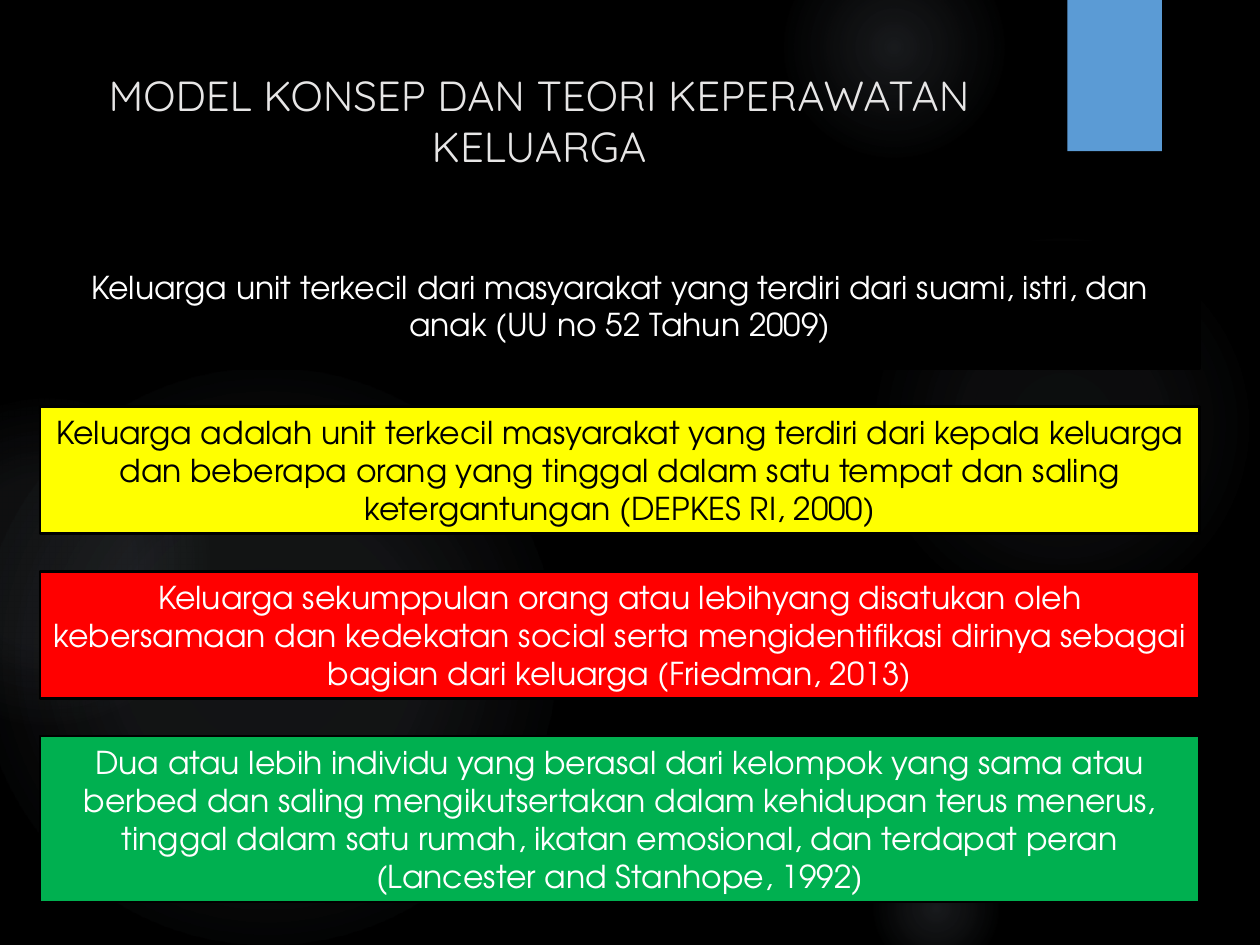
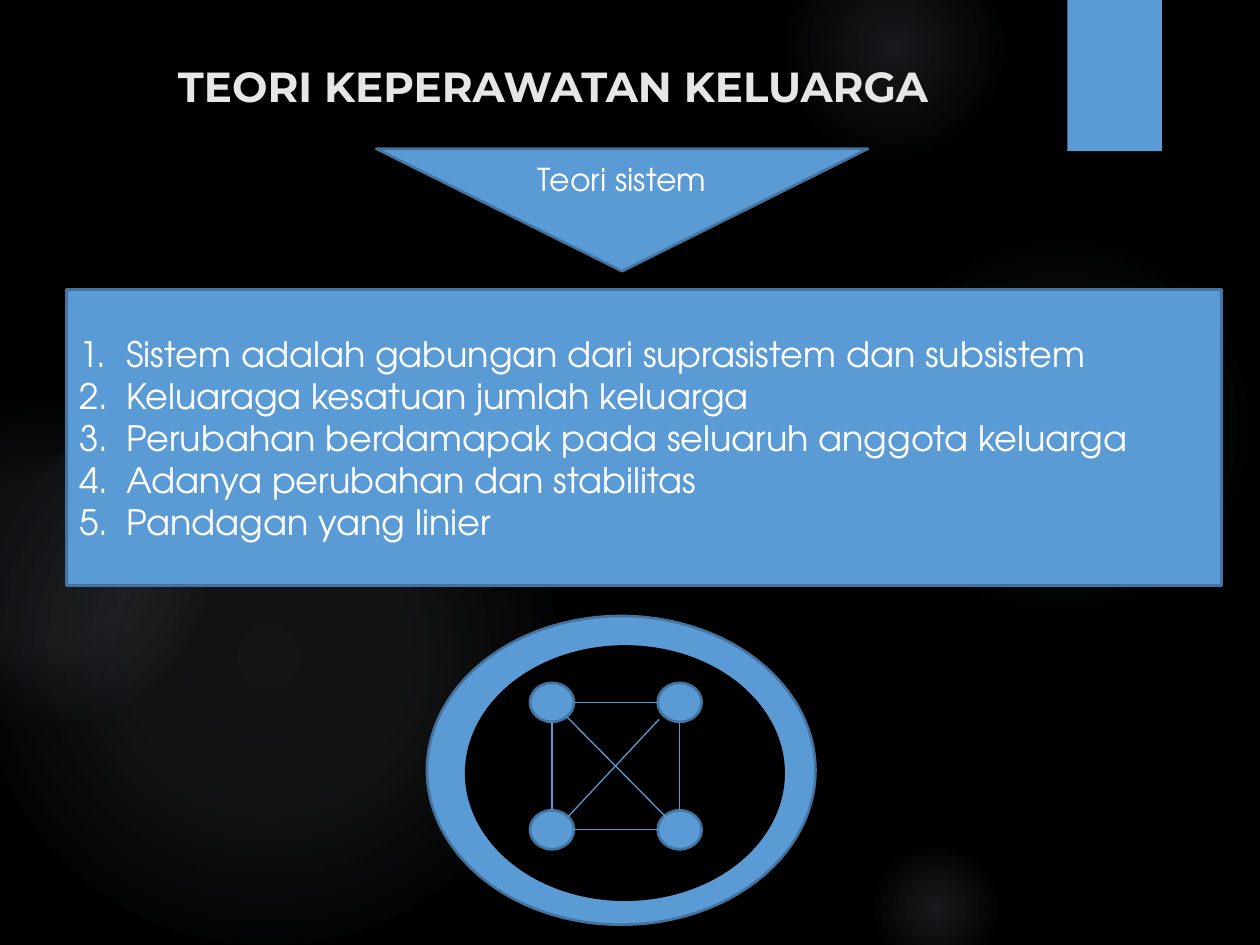
from lxml import etree
from pptx import Presentation
from pptx import util as u
from pptx.dml import color
from pptx.enum import shapes, text
from pptx.oxml import ns

COLOURS = {
    "black": "000000", "white": "FFFFFF", "title": "E7E6E6", "blue": "5B9BD5",
    "edge": "43739E", "glow": "ADB9CA", "yellow": "FFFF00", "red": "FF0000",
    "green": "00B050",
}
BODY_FONT = "TeX Gyre Adventor"
SHAPE = shapes.MSO_SHAPE
TITLE_ONLY, TITLE_AND_CONTENT = 5, 1

GLOWS = [
    (496, 132, 222, [(0, 7), (36, 6), (69, 0)]),
    (448, -36, 126, [(0, 14), (36, 7), (73, 0)]),
    (496, 480, 78, [(0, 14), (36, 7), (66, 0)]),
    (-12, 210, 330, [(0, 11), (36, 10), (75, 0)]),
    (-66, 228, 186, [(0, 8), (36, 8), (72, 0)]),
]
DEFINITIONS = [
    ("Keluarga unit terkecil dari masyarakat yang terdiri dari suami, istri, dan anak "
     "(UU no 52 Tahun 2009)", "black", "white", 72.7),
    ("Keluarga adalah unit terkecil masyarakat yang terdiri dari kepala keluarga dan beberapa "
     "orang yang tinggal dalam satu tempat dan saling ketergantungan (DEPKES RI, 2000)",
     "yellow", "black", 72.7),
    ("Keluarga sekumppulan orang atau lebihyang disatukan oleh kebersamaan dan kedekatan social "
     "serta mengidentifikasi dirinya sebagai bagian dari keluarga (Friedman, 2013)",
     "red", "white", 72.7),
    ("Dua atau lebih individu yang berasal dari kelompok yang sama atau berbed dan saling "
     "mengikutsertakan dalam kehidupan terus menerus, tinggal dalam satu rumah, ikatan "
     "emosional, dan terdapat peran (Lancester and Stanhope, 1992)", "green", "white", 95),
]
SYSTEM_POINTS = [
    "Sistem adalah gabungan dari suprasistem dan subsistem",
    "Keluaraga kesatuan jumlah keluarga",
    "Perubahan berdamapak pada seluaruh anggota keluarga",
    "Adanya perubahan dan stabilitas",
    "Pandagan yang linier",
]


def rgb(name):
    return color.RGBColor.from_string(COLOURS[name])


def add_xml(parent, tag, **attributes):
    return etree.SubElement(parent, ns.qn(tag), {key: str(value) for key, value in attributes.items()})


def add_colour(parent, name, alpha):
    colour = add_xml(parent, "a:srgbClr", val=COLOURS[name])
    add_xml(colour, "a:alpha", val=alpha * 1000)


class Deck:
    def __init__(self):
        self.presentation = Presentation()
        self.presentation.slide_width, self.presentation.slide_height = u.Pt(720), u.Pt(540)
        self.slide = None

    def new_slide(self, layout):
        self.slide = self.presentation.slides.add_slide(self.presentation.slide_layouts[layout])

    def place(self, shape, box):
        for name, value in zip(("left", "top", "width", "height"), box):
            setattr(shape, name, u.Pt(value))

    def paint(self, shape, fill, edge):
        shape.fill.solid()
        shape.fill.fore_color.rgb = rgb(fill)
        if edge:
            shape.line.color.rgb = rgb(edge)
            shape.line.width = u.Pt(1.5)
        else:
            shape.line.fill.background()

    def set_text(self, shape, lines, size, colour="white", name=BODY_FONT, bold=False,
                 alignment=text.PP_ALIGN.CENTER):
        frame = shape.text_frame
        frame_format = {"word_wrap": True, "auto_size": text.MSO_AUTO_SIZE.NONE,
                        "vertical_anchor": text.MSO_ANCHOR.MIDDLE}
        for key, value in frame_format.items():
            setattr(frame, key, value)
        frame.text = "\n".join(lines)
        for paragraph in frame.paragraphs:
            paragraph.alignment = alignment
            paragraph.space_before = u.Pt(0)
            for run in paragraph.runs:
                for key, value in {"size": u.Pt(size), "name": name, "bold": bold}.items():
                    setattr(run.font, key, value)
                run.font.color.rgb = rgb(colour)

    def title(self, box, wording, font, bold=False):
        title = self.slide.shapes.title
        self.place(title, box)
        self.set_text(title, [wording], 24, "title", font, bold)

    def shape(self, kind, box, fill="blue", edge="edge"):
        shape = self.slide.shapes.add_shape(kind, *map(u.Pt, box))
        shape.shadow.inherit = False
        self.paint(shape, fill, edge)
        return shape

    def numbered_list(self, box, items):
        body = self.slide.placeholders[1]
        self.place(body, box)
        self.paint(body, "blue", "edge")
        self.set_text(body, items, 20, alignment=text.PP_ALIGN.LEFT)
        for paragraph in body.text_frame.paragraphs:
            properties = paragraph._p.get_or_add_pPr()
            properties.set("marL", str(u.Pt(27)))
            properties.set("indent", str(u.Pt(-27)))
            add_xml(properties, "a:buFont", typeface="+mj-lt")
            add_xml(properties, "a:buAutoNum", type="arabicPeriod")

    def line(self, start, end):
        line = self.slide.shapes.add_connector(
            shapes.MSO_CONNECTOR.STRAIGHT, *map(u.Pt, (*start, *end)))
        line.line.color.rgb = rgb("blue")
        line.line.width = u.Pt(0.75)
        add_xml(line.element.spPr, "a:effectLst")

    def glow(self, left, top, size, stops):
        shape = self.shape(SHAPE.OVAL, (left, top, size, size), "glow", None)
        solid = shape.element.spPr.find(ns.qn("a:solidFill"))
        gradient = etree.Element(ns.qn("a:gradFill"), rotWithShape="1")
        stop_list = add_xml(gradient, "a:gsLst")
        for position, alpha in stops:
            add_colour(add_xml(stop_list, "a:gs", pos=position * 1000), "glow", alpha)
        circle = add_xml(gradient, "a:path", path="circle")
        add_xml(circle, "a:fillToRect", l=50000, t=50000, r=50000, b=50000)
        solid.getparent().replace(solid, gradient)
        return shape

    def ribbon(self):
        shape = self.shape(SHAPE.RECTANGLE, (610, 0, 54, 86.4), "blue", None)
        effects = shape.element.spPr.find(ns.qn("a:effectLst"))
        shadow = add_xml(effects, "a:outerShdw", blurRad=u.Pt(3), dist=u.Pt(2),
                         dir=5400000, rotWithShape=0)
        add_colour(shadow, "black", 45)
        return shape

    def decorate_master(self):
        master = self.presentation.slide_master
        master.background.fill.solid()
        master.background.fill.fore_color.rgb = rgb("black")
        decorations = [self.glow(*glow) for glow in GLOWS] + [self.ribbon()]
        for number, shape in enumerate(decorations):
            shape.element.nvSpPr.cNvPr.set("id", str(101 + number))
            master.shapes.element.insert(2 + number, shape.element)


def build_definitions(deck):
    deck.title((23, 36, 570, 65.5), "MODEL KONSEP DAN TEORI KEPERAWATAN KELUARGA", "Quicksand")
    for row, (wording, fill, colour, height) in enumerate(DEFINITIONS):
        card = deck.shape(SHAPE.RECTANGLE, (23, 138.2 + 94.1 * row, 662.4, height), fill, "black")
        deck.set_text(card, [wording], 18, colour)


def build_network(deck):
    deck.shape(SHAPE.OVAL, (244, 352, 222, 176.4))
    deck.shape(SHAPE.OVAL, (266.4, 369.4, 181.4, 144.7), "black", "black")
    lefts, tops, width, height = (302.8, 375.8), (390.2, 463), 25.2, 22.3
    for top in tops:
        for left in lefts:
            deck.shape(SHAPE.OVAL, (left, top, width, height))
    for top in tops:
        middle = top + height / 2
        deck.line((lefts[0] + width, middle), (lefts[1], middle))
    for left in lefts:
        middle = left + width / 2
        deck.line((middle, tops[0] + height), (middle, tops[1]))
    deck.line((324, 409.7), (388.1, 474.5))
    deck.line((324.7, 466.6), (376.6, 411.1))


def build_system_theory(deck):
    deck.title((38, 28.8, 556, 40.3), "TEORI KEPERAWATAN KELUARGA", "Montserrat", True)
    heading = deck.shape(SHAPE.FLOWCHART_MERGE, (215, 85, 281, 70))
    deck.set_text(heading, ["Teori sistem"], 18)
    deck.numbered_list((38, 165.6, 660, 169), SYSTEM_POINTS)
    build_network(deck)


def main():
    deck = Deck()
    deck.new_slide(TITLE_ONLY)
    deck.decorate_master()
    build_definitions(deck)
    deck.new_slide(TITLE_AND_CONTENT)
    build_system_theory(deck)
    deck.presentation.save("out.pptx")


if __name__ == "__main__":
    main()
